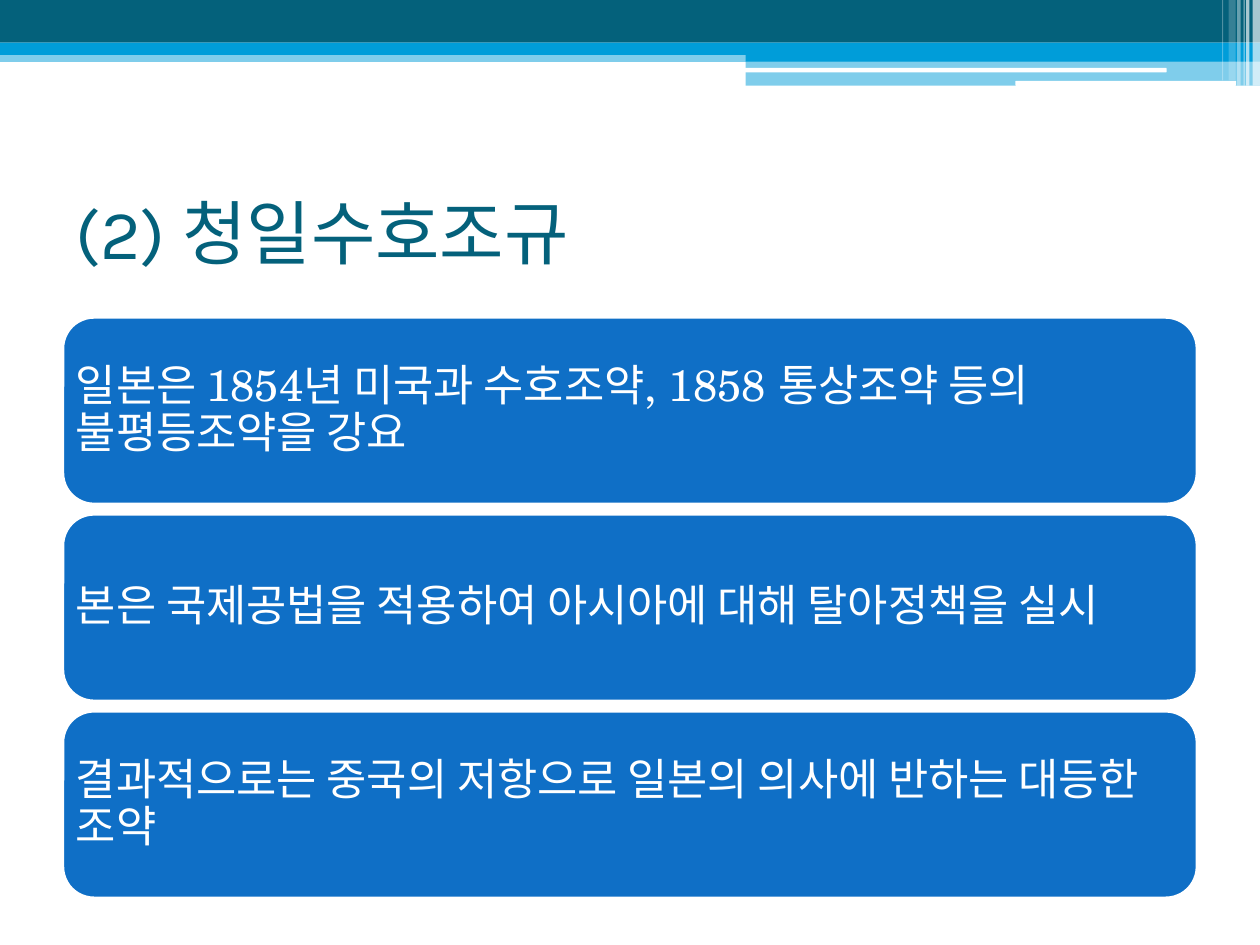
import pptx
import pptx.util
import pptx.dml.color
import pptx.enum.shapes
import pptx.enum.text
import pptx.oxml.ns
import lxml.etree

Cm = pptx.util.Cm
Pt = pptx.util.Pt
RGB = pptx.dml.color.RGBColor
KIND = pptx.enum.shapes.MSO_SHAPE
ALIGN = pptx.enum.text.PP_ALIGN
ANCHOR = pptx.enum.text.MSO_ANCHOR

TEAL = RGB(0x04, 0x61, 0x7B)
SKY = RGB(0x00, 0x9D, 0xD9)
BLUE = RGB(0x0F, 0x6F, 0xC6)
WHITE = RGB(0xFF, 0xFF, 0xFF)

# left, top, width, height, colour, opacity in percent
BANDS = [
    (0, 1.02, 25.4, 0.23, SKY, 50),
    (0, 0, 25.4, 0.86, TEAL, 100),
    (0, 0.86, 25.4, 0.25, SKY, 100),
    (15.03, 0.99, 10.37, 0.25, SKY, 100),
    (15.03, 1.23, 10.37, 0.5, SKY, 50),
]
BARS = [(15.01, 1.37, 8.51, 0.09), (20.47, 1.63, 4.45, 0.1)]
# left, width, height, opacity in percent
STRIPES = [
    (25.25, 0.15, 1.73, 65),
    (25.12, 0.07, 1.73, 65),
    (25.07, 0.02, 1.73, 60),
    (24.94, 0.07, 1.73, 40),
    (24.77, 0.14, 1.62, 20),
    (24.64, 0.02, 1.62, 30),
]
NOTES = [
    "일본은 1854년 미국과 수호조약, 1858 통상조약 등의 불평등조약을 강요",
    "본은 국제공법을 적용하여 아시아에 대해 탈아정책을 실시",
    "결과적으로는 중국의 저항으로 일본의 의사에 반하는 대등한 조약",
]


def add_block(shapes, kind, box, color, alpha=100):
    block = shapes.add_shape(kind, *[Cm(n) for n in box])
    block.shadow.inherit = False
    block.fill.solid()
    block.fill.fore_color.rgb = color
    block.line.fill.background()
    if alpha < 100:
        tone = block.fill._xPr.find(".//" + pptx.oxml.ns.qn("a:srgbClr"))
        lxml.etree.SubElement(tone, pptx.oxml.ns.qn("a:alpha"), val=str(alpha * 1000))
    return block


def add_text(frame, text, font, size, color):
    para = frame.paragraphs[0]
    para.alignment = ALIGN.LEFT
    run = para.add_run()
    run.text = text
    run.font.name = font
    run.font.size = Pt(size)
    run.font.color.rgb = color
    return para


def add_header(slide, x, y):
    for left, top, wide, high, color, alpha in BANDS:
        add_block(slide.shapes, KIND.RECTANGLE, (x + left, y + top, wide, high), color, alpha)
    for left, top, wide, high in BARS:
        add_block(slide.shapes, KIND.ROUNDED_RECTANGLE, (x + left, y + top, wide, high), WHITE)
    for left, wide, high, alpha in STRIPES:
        add_block(slide.shapes, KIND.RECTANGLE, (x + left, y, wide, high), WHITE, alpha)


def set_title(slide, box, text):
    title = slide.shapes.title
    title.left, title.top, title.width, title.height = [Cm(n) for n in box]
    title.text_frame.vertical_anchor = ANCHOR.MIDDLE
    add_text(title.text_frame, text, "Karla", 40, TEAL)


def add_cards(slide, box, notes, gap):
    """Stack one rounded card per note, filling the box evenly."""
    x, y, wide, high = box
    tall = (high - gap * (len(notes) - 1)) / len(notes)
    group = slide.shapes.add_group_shape()
    for i, note in enumerate(notes):
        place = (x, y + i * (tall + gap), wide, tall)
        card = add_block(group.shapes, KIND.ROUNDED_RECTANGLE, place, BLUE)
        card.line.color.rgb = WHITE
        card.line.width = Pt(1.5)
        frame = card.text_frame
        frame.word_wrap = True
        frame.vertical_anchor = ANCHOR.MIDDLE
        # The rounded corners already inset the text
        frame.margin_left = frame.margin_right = Cm(0.08)
        frame.margin_top = frame.margin_bottom = Cm(0.08)
        para = add_text(frame, note, "TeX Gyre Schola", 25, WHITE)
        para.line_spacing = 0.9


def main():
    deck = pptx.Presentation()
    deck.slide_width, deck.slide_height = Cm(25.4), Cm(19.05)
    slide = deck.slides.add_slide(deck.slide_layouts.get_by_name("Title Only"))
    add_header(slide, 0, 0)
    set_title(slide, (1.27, 3.18, 22.86, 2.97), "(2) 청일수호조규")
    add_cards(slide, (1.27, 6.4, 22.86, 11.7), NOTES, 0.21)
    deck.save("out.pptx")


if __name__ == "__main__":
    main()
